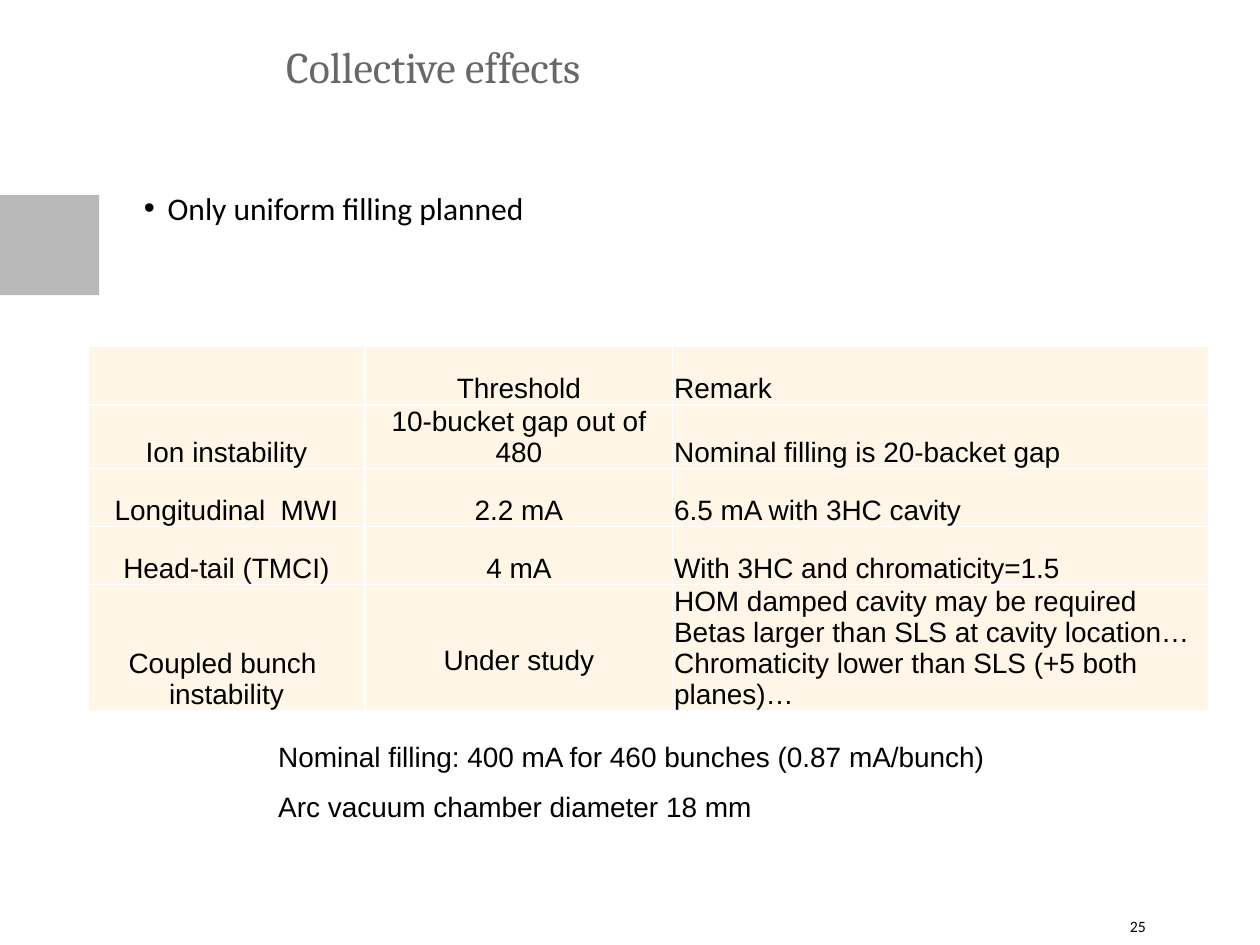
import pptx
import pptx.dml.color
import pptx.enum.shapes
import pptx.enum.text
import pptx.oxml
import pptx.oxml.ns
import pptx.util

Cm = pptx.util.Cm
Pt = pptx.util.Pt
RGBColor = pptx.dml.color.RGBColor
ALIGN = pptx.enum.text.PP_ALIGN
ANCHOR = pptx.enum.text.MSO_ANCHOR

BLACK = RGBColor(0x00, 0x00, 0x00)
WHITE = RGBColor(0xFF, 0xFF, 0xFF)
TITLE_GREY = RGBColor(0x68, 0x68, 0x68)
BLOCK_GREY = RGBColor(0xB9, 0xB9, 0xB9)
CREAM = RGBColor(0xFF, 0xF6, 0xE7)

COL_WIDTHS = (5.59, 6.2, 10.8)
ROW_HEIGHTS = (1.17, 1.17, 1.17, 1.17, 2.34)
ROWS = (
    ("", "Threshold", "Remark"),
    ("Ion instability", "10-bucket gap out of 480", "Nominal filling is 20-backet gap"),
    ("Longitudinal  MWI", "2.2 mA", "6.5 mA with 3HC cavity"),
    ("Head-tail (TMCI)", "4 mA", "With 3HC and chromaticity=1.5"),
    ("Coupled bunch  instability", "Under study",
     "HOM damped cavity may be required\n"
     "Betas larger than SLS at cavity location…\n"
     "Chromaticity lower than SLS (+5 both planes)…"),
)


def write(tf, text, font="Arial", size=16, color=BLACK, align=ALIGN.LEFT,
          gap=0, line=1.0, bullet=None):
    """Write one paragraph per line of text; gap is the space between them in points."""
    for i, words in enumerate(text.split("\n")):
        p = tf.paragraphs[0] if i == 0 else tf.add_paragraph()
        p.alignment = align
        p.line_spacing = line
        p.space_before = Pt(gap if i else 0)
        if bullet:
            add_bullet(p, bullet)
        r = p.add_run()
        r.text = words
        r.font.name = font
        r.font.size = Pt(size)
        r.font.bold = False
        r.font.color.rgb = color


def add_bullet(p, char):
    pPr = p._p.get_or_add_pPr()
    pPr.set("marL", str(Cm(0.48)))
    pPr.set("indent", str(-Cm(0.48)))
    color = pptx.oxml.ns.qn("a:buClr")
    bu_color = pPr.makeelement(color, {})
    bu_color.append(pPr.makeelement(pptx.oxml.ns.qn("a:srgbClr"), {"val": str(BLACK)}))
    pPr.append(bu_color)
    pPr.append(pPr.makeelement(pptx.oxml.ns.qn("a:buFont"), {"typeface": "Arial"}))
    pPr.append(pPr.makeelement(pptx.oxml.ns.qn("a:buChar"), {"char": char}))


def place(sp, left, top, width, height):
    """Move a text shape, and give it no insets and top-anchored text."""
    sp.left, sp.top, sp.width, sp.height = Cm(left), Cm(top), Cm(width), Cm(height)
    tf = sp.text_frame
    tf.margin_left = tf.margin_right = tf.margin_top = tf.margin_bottom = 0
    tf.vertical_anchor = ANCHOR.TOP
    tf.auto_size = pptx.enum.text.MSO_AUTO_SIZE.NONE
    tf.word_wrap = True
    return tf


def add_block(slide, left, top, width, height):
    sp = slide.shapes.add_shape(pptx.enum.shapes.MSO_SHAPE.RECTANGLE,
                                Cm(left), Cm(top), Cm(width), Cm(height))
    sp.shadow.inherit = False
    sp.fill.solid()
    sp.fill.fore_color.rgb = BLOCK_GREY
    sp.line.fill.background()


def set_borders(cell):
    tcPr = cell._tc.get_or_add_tcPr()
    for i, side in enumerate(("lnL", "lnR", "lnT", "lnB")):
        tcPr.insert(i, pptx.oxml.parse_xml(
            f'<a:{side} {pptx.oxml.ns.nsdecls("a")} w="{Pt(1)}"><a:solidFill>'
            f'<a:srgbClr val="{WHITE}"/></a:solidFill></a:{side}>'))


def add_instability_table(slide, left, top):
    table = slide.shapes.add_table(
        len(ROWS), len(COL_WIDTHS), Cm(left), Cm(top),
        Cm(sum(COL_WIDTHS)), Cm(sum(ROW_HEIGHTS))).table
    table.first_row = table.horz_banding = False
    for col, width in zip(table.columns, COL_WIDTHS):
        col.width = Cm(width)
    for row, height, texts in zip(table.rows, ROW_HEIGHTS, ROWS):
        row.height = Cm(height)
        for c, (cell, text) in enumerate(zip(row.cells, texts)):
            cell.fill.solid()
            cell.fill.fore_color.rgb = CREAM
            set_borders(cell)
            cell.vertical_anchor = ANCHOR.BOTTOM
            cell.margin_left = cell.margin_right = cell.margin_top = Cm(0.03)
            cell.margin_bottom = 0
            if text:
                write(cell.text_frame, text, align=ALIGN.LEFT if c == 2 else ALIGN.CENTER)
    table.cell(4, 1).margin_bottom = Cm(0.69)


def add_notes_box(slide, left, top, width, height):
    tf = slide.shapes.add_textbox(Cm(left), Cm(top), Cm(width), Cm(height)).text_frame
    tf.word_wrap = False
    write(tf, "Nominal filling: 400 mA for 460 bunches (0.87 mA/bunch)\n"
              "Arc vacuum chamber diameter 18 mm", gap=9.5)


def main():
    prs = pptx.Presentation()
    prs.slide_width, prs.slide_height = Cm(25.4), Cm(19.05)
    slide = prs.slides.add_slide(prs.slide_layouts[1])
    add_block(slide, 0, 3.93, 2, 2.02)
    write(place(slide.shapes.title, 5.77, 0.81, 18.64, 1.42), "Collective effects",
          font="Cambria", size=25, color=TITLE_GREY)
    write(place(slide.placeholders[1], 2.9, 3.73, 21.51, 13), "Only uniform filling planned",
          font="Calibri", size=18, line=1.1, bullet="•")
    add_instability_table(slide, 1.77, 6.99)
    add_notes_box(slide, 5.36, 14.78, 15.54, 1.8)
    number = slide.shapes.add_textbox(0, 0, 0, 0)
    write(place(number, 22.78, 18.49, 1.6, 0.56), "25", font="Calibri", size=9)
    prs.save("out.pptx")


if __name__ == "__main__":
    main()
